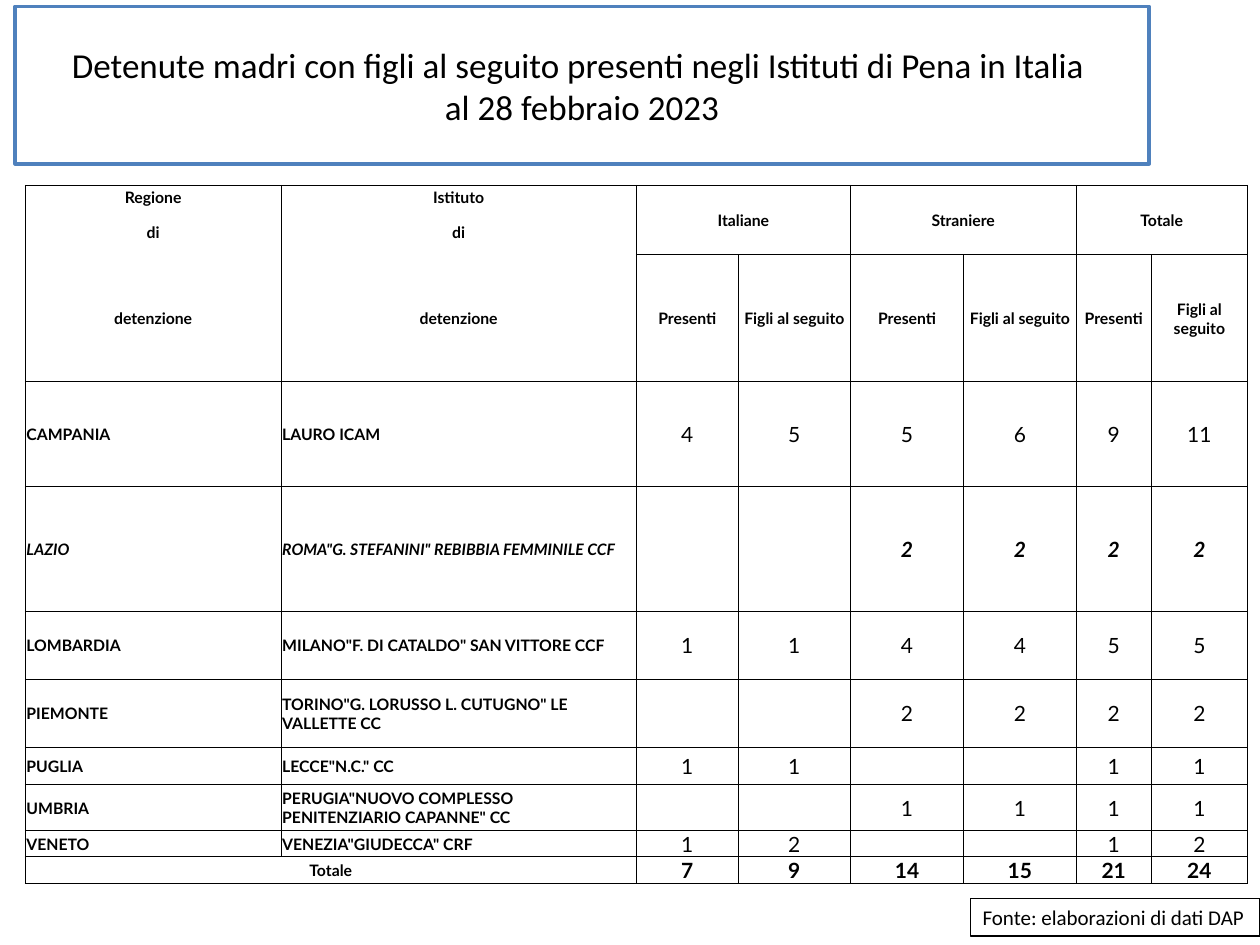
from lxml.etree import SubElement
from pptx import Presentation
from pptx.dml.color import RGBColor as RGB
from pptx.enum.shapes import MSO_SHAPE as Shape
from pptx.enum.text import MSO_ANCHOR as Anchor, MSO_AUTO_SIZE as Auto, PP_ALIGN as Align
from pptx.oxml.ns import qn
from pptx.util import Inches, Pt

HUES = {"ink": "000000", "page": "FFFFFF", "frame": "4F81BD"}

WIDTHS = [2.03, 2.82, 0.81, 0.89, 0.9, 0.89, 0.6, 0.76]
HEIGHTS = [0.19, 0.36, 1.01, 0.83, 0.99, 0.54, 0.54, 0.3, 0.36, 0.19, 0.19]
GROUPS = ["Italiane", "Straniere", "Totale"]
STUBS = [("Regione", "Istituto"), ("di", "di"), ("detenzione", "detenzione")]
ROWS = [
    ("CAMPANIA", "LAURO ICAM", "4", "5", "5", "6", "9", "11"),
    ("LAZIO", 'ROMA"G. STEFANINI" REBIBBIA FEMMINILE CCF', "", "", "2", "2", "2", "2"),
    ("LOMBARDIA", 'MILANO"F. DI CATALDO" SAN VITTORE CCF', "1", "1", "4", "4", "5", "5"),
    ("PIEMONTE", 'TORINO"G. LORUSSO L. CUTUGNO" LE VALLETTE CC', "", "", "2", "2", "2", "2"),
    ("PUGLIA", 'LECCE"N.C." CC', "1", "1", "", "", "1", "1"),
    ("UMBRIA", 'PERUGIA"NUOVO COMPLESSO PENITENZIARIO CAPANNE" CC', "", "", "1", "1", "1", "1"),
    ("VENETO", 'VENEZIA"GIUDECCA" CRF', "1", "2", "", "", "1", "2"),
    ("Totale", "", "7", "9", "14", "15", "21", "24"),
]


def write(frame, text, size=9, font="Lato", bold=False, italic=False, align=Align.CENTER):
    para = frame.paragraphs[0]
    para.alignment = align
    if not text:
        # An empty cell keeps a small line height
        SubElement(para._p, qn("a:endParaRPr"), sz=str(size * 100))
        return
    for i, line in enumerate(text.split("\n")):
        if i:
            para.add_line_break()
        run = para.add_run()
        run.text = line
        run.font.size = Pt(size)
        run.font.name = font
        run.font.bold = bold
        run.font.italic = italic
        run.font.color.rgb = RGB.from_string(HUES["ink"])


def paint(shape, line, width):
    shape.fill.solid()
    shape.fill.fore_color.rgb = RGB.from_string(HUES["page"])
    shape.line.color.rgb = RGB.from_string(HUES[line])
    shape.line.width = Pt(width)


def rule(cell, sides):
    """Draw the named sides of a cell and clear the others."""
    props = cell._tc.get_or_add_tcPr()
    for side in "LRTB":
        line = SubElement(props, qn("a:ln" + side), w=str(Pt(0.5)))
        if side in sides:
            fill = SubElement(line, qn("a:solidFill"))
            SubElement(fill, qn("a:srgbClr"), val=HUES["ink"])
        else:
            SubElement(line, qn("a:noFill"))


def add_title(slide, box):
    title = slide.shapes.title
    title.left, title.top, title.width, title.height = map(Inches, box)
    paint(title, "frame", 2)
    title.text_frame.vertical_anchor = Anchor.MIDDLE
    write(title.text_frame, "Detenute madri con figli al seguito presenti negli Istituti "
          "di Pena in Italia \nal 28 febbraio 2023", size=20, font="Calibri")


def add_data(slide, box):
    table = slide.shapes.add_table(len(HEIGHTS), len(WIDTHS), *map(Inches, box)).table
    table.first_row = table.horz_banding = False
    for col, width in zip(table.columns, WIDTHS):
        col.width = Inches(width)
    for row, height in zip(table.rows, HEIGHTS):
        row.height = Inches(height)

    # Borders, margins and fill; the stub heads have no inner rules
    for r in range(len(HEIGHTS)):
        for c in range(len(WIDTHS)):
            cell = table.cell(r, c)
            stub = c < 2 and r < 3
            rule(cell, ["LRT", "LR", "LRB"][r] if stub else "LRTB")
            cell.fill.background()
            cell.vertical_anchor = Anchor.MIDDLE
            cell.margin_left = cell.margin_right = cell.margin_top = Inches(0.01)
            cell.margin_bottom = 0

    # Heads
    for r, pair in enumerate(STUBS):
        for c, text in enumerate(pair):
            write(table.cell(r, c).text_frame, text, bold=True)
    for i, group in enumerate(GROUPS):
        c = 2 + 2 * i
        table.cell(0, c).merge(table.cell(1, c + 1))
        write(table.cell(0, c).text_frame, group, bold=True)
        for j, text in enumerate(("Presenti", "Figli al seguito")):
            write(table.cell(2, c + j).text_frame, text, bold=True)

    # Regions and the total
    last = len(HEIGHTS) - 1
    table.cell(last, 0).merge(table.cell(last, 1))
    for r, row in enumerate(ROWS, len(STUBS)):
        lazio = row[0] == "LAZIO"
        for c, text in enumerate(row):
            name = c < 2
            write(table.cell(r, c).text_frame, text,
                  size=9 if name or not text else 12,
                  bold=name or lazio or r == last, italic=lazio,
                  align=Align.LEFT if name and r < last else Align.CENTER)


def add_source(slide, box):
    note = slide.shapes.add_shape(Shape.RECTANGLE, *map(Inches, box))
    note.shadow.inherit = False
    paint(note, "ink", 0.75)
    frame = note.text_frame
    frame.word_wrap = False
    frame.auto_size = Auto.SHAPE_TO_FIT_TEXT
    frame.vertical_anchor = Anchor.TOP
    write(frame, "Fonte: elaborazioni di dati DAP", size=12, font="Calibri", align=Align.LEFT)


def main():
    deck = Presentation()
    deck.slide_width, deck.slide_height = Inches(10), Inches(7.5)
    slide = deck.slides.add_slide(deck.slide_layouts[5])
    add_title(slide, (0.12, 0.05, 9, 1.25))
    add_source(slide, (7.7, 7.13, 2.3, 0.3))
    add_data(slide, (0.2, 1.47, sum(WIDTHS), sum(HEIGHTS)))
    deck.save("out.pptx")


if __name__ == "__main__":
    main()
